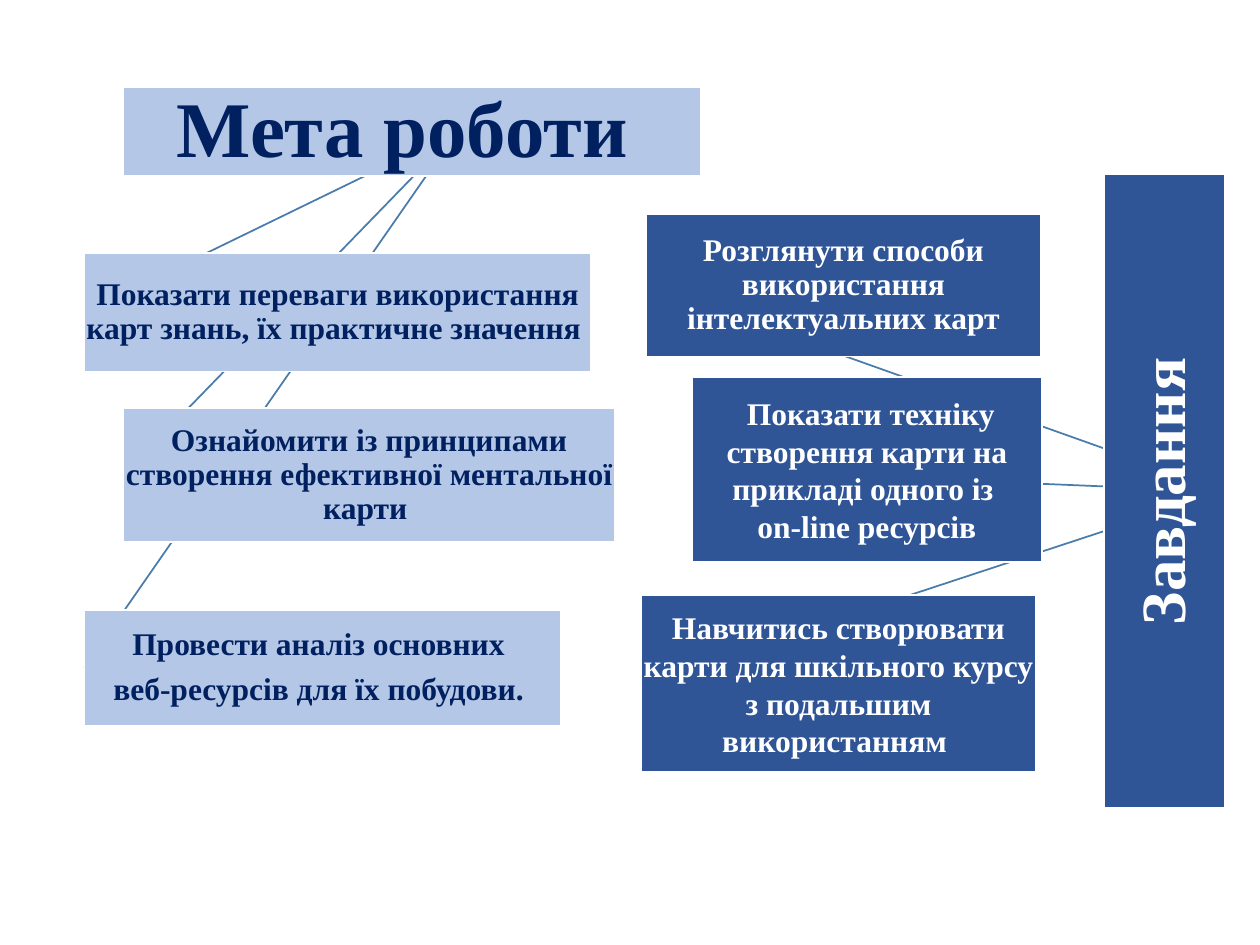
from dataclasses import dataclass

from lxml.etree import SubElement
from pptx import Presentation
from pptx.dml.color import RGBColor
from pptx.enum.shapes import MSO_CONNECTOR, MSO_SHAPE
from pptx.enum.text import MSO_ANCHOR, PP_ALIGN
from pptx.oxml.ns import qn
from pptx.shapes.autoshape import Shape
from pptx.shapes.connector import Connector
from pptx.slide import Slide
from pptx.util import Inches, Pt

FONT = "Times New Roman"
WHITE = RGBColor(0xFF, 0xFF, 0xFF)
NAVY = RGBColor(0x00, 0x20, 0x60)
LIGHT_BLUE = RGBColor(0xB4, 0xC7, 0xE7)
DARK_BLUE = RGBColor(0x2F, 0x55, 0x97)
LINE_BLUE = RGBColor(0x49, 0x7C, 0xAB)
LEFT_SIDE = 1


@dataclass(frozen=True)
class Style:
    fill: RGBColor
    text: RGBColor


@dataclass(frozen=True)
class Box:
    left: float
    top: float
    width: float
    height: float
    paragraphs: tuple[str, ...]
    line_spacing: float = 0.9
    size: float = 18
    inset: float = 0.01


@dataclass(frozen=True)
class Branch:
    hub: tuple[float, float]
    head: Box
    items: tuple[Box, ...]
    style: Style


GOALS = Branch(
    hub=(3.63, 1.04),
    head=Box(0.98, 0.69, 4.58, 0.71, ("Мета роботи ",), size=45, inset=0.03),
    items=(
        Box(0.67, 2.01, 4.02, 0.94,
            ("Показати переваги використання карт знань, їх практичне значення ",)),
        Box(0.98, 3.24, 3.9, 1.06,
            ("Ознайомити із принципами створення ефективної ментальної карти ",)),
        Box(0.67, 4.84, 3.78, 0.92,
            ("Провести аналіз основних ", "веб-ресурсів для їх побудови. ")),
    ),
    style=Style(LIGHT_BLUE, NAVY),
)
TASKS = Branch(
    hub=(9.72, 3.9),
    head=Box(6.73, 3.42, 5.03, 0.96, ("Завдання",), size=36, inset=0.03),
    items=(
        Box(5.13, 1.7, 3.13, 1.13,
            ("Розглянути способи використання інтелектуальних карт",)),
        Box(5.49, 2.99, 2.78, 1.47,
            (" Показати техніку створення карти на прикладі одного із ",
             "on-line ресурсів"), line_spacing=1),
        Box(5.09, 4.72, 3.13, 1.41,
            ("Навчитись створювати карти для шкільного курсу з подальшим використанням ",),
            line_spacing=1),
    ),
    style=Style(DARK_BLUE, WHITE),
)


def format_box(shape: Shape, box: Box, style: Style) -> None:
    """Place, colour and fill a box with centred bold text."""
    shape.left, shape.top = Inches(box.left), Inches(box.top)
    shape.width, shape.height = Inches(box.width), Inches(box.height)
    shape.shadow.inherit = False
    shape.fill.solid()
    shape.fill.fore_color.rgb = style.fill
    shape.line.color.rgb = WHITE
    shape.line.width = Pt(1)

    frame = shape.text_frame
    frame.text = "\n".join(box.paragraphs)
    frame.word_wrap = True
    frame.vertical_anchor = MSO_ANCHOR.MIDDLE
    frame.margin_left = frame.margin_right = Inches(box.inset)
    frame.margin_top = frame.margin_bottom = Inches(box.inset)
    for paragraph in frame.paragraphs:
        paragraph.alignment = PP_ALIGN.CENTER
        paragraph.line_spacing = box.line_spacing
        paragraph.space_before = Pt(0)
        if box.line_spacing < 1:
            paragraph.space_after = Pt(0.35 * box.size)
        paragraph.font.name = FONT
        paragraph.font.size = Pt(box.size)
        paragraph.font.bold = True
        paragraph.font.color.rgb = style.text


def add_box(slide: Slide, box: Box, style: Style) -> Shape:
    shape = slide.shapes.add_shape(MSO_SHAPE.RECTANGLE, 0, 0, 0, 0)
    format_box(shape, box, style)
    return shape


def add_spoke(slide: Slide, hub: tuple[float, float], box: Box) -> Connector:
    """Draw a line from the hub to the middle of a box's left side."""
    connector = slide.shapes.add_connector(
        MSO_CONNECTOR.STRAIGHT, Inches(hub[0]), Inches(hub[1]),
        Inches(box.left), Inches(box.top + box.height / 2))
    connector.line.color.rgb = LINE_BLUE
    connector.line.width = Pt(1)
    SubElement(connector._element.spPr, qn("a:effectLst"))
    return connector


def add_spokes(slide: Slide, branch: Branch) -> list[Connector]:
    return [add_spoke(slide, branch.hub, box) for box in reversed(branch.items)]


def add_items(slide: Slide, branch: Branch, spokes: list[Connector]) -> None:
    for box, spoke in zip(branch.items, reversed(spokes)):
        spoke.end_connect(add_box(slide, box, branch.style), LEFT_SIDE)


def main() -> None:
    presentation = Presentation()
    presentation.slide_width, presentation.slide_height = Inches(10), Inches(7.5)
    slide = presentation.slides.add_slide(presentation.slide_layouts[5])

    # Goals: the title stands in front of its spokes
    spokes = add_spokes(slide, GOALS)
    title = slide.shapes.title
    format_box(title, GOALS.head, GOALS.style)
    slide.shapes._spTree.append(title._element)
    add_items(slide, GOALS, spokes)

    # Tasks: the heading is turned to read upwards
    spokes = add_spokes(slide, TASKS)
    heading = add_box(slide, TASKS.head, TASKS.style)
    heading.rotation = 270
    add_items(slide, TASKS, spokes)

    presentation.save("out.pptx")


if __name__ == "__main__":
    main()
